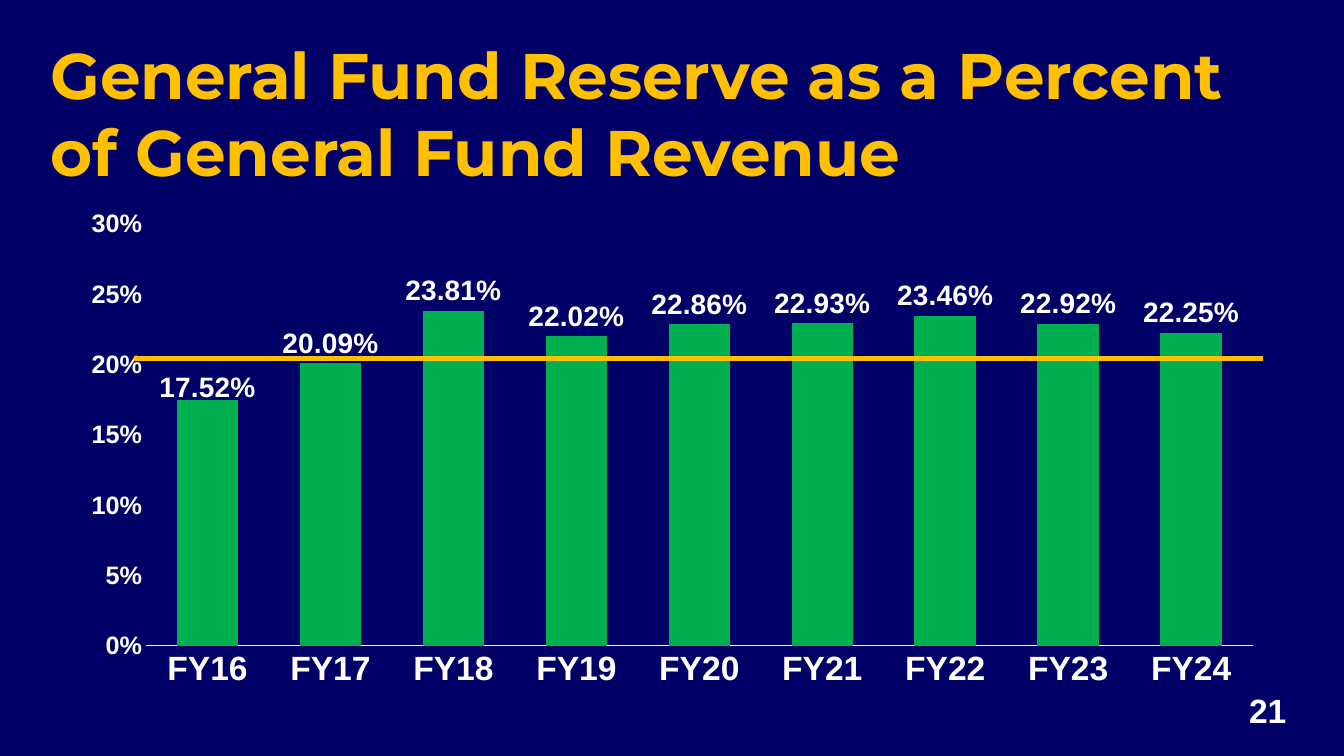
from lxml import etree
from pptx import Presentation
from pptx import util as u
from pptx.chart.data import CategoryChartData
from pptx.dml.color import RGBColor
from pptx.enum import chart as ch, shapes, text
from pptx.oxml import ns

COLORS = {"navy": "000066", "gold": "FFC000", "green": "00B050", "white": "FFFFFF"}
RESERVES = {
    "FY16": 0.1752, "FY17": 0.2009, "FY18": 0.2381,
    "FY19": 0.2202, "FY20": 0.2286, "FY21": 0.2293,
    "FY22": 0.2346, "FY23": 0.2292, "FY24": 0.2225,
}


def rgb(name):
    return RGBColor.from_string(COLORS[name])


def manual_layout(**values):
    layout = etree.Element(ns.qn("c:layout"))
    manual = etree.SubElement(layout, ns.qn("c:manualLayout"))
    for tag, value in values.items():
        etree.SubElement(manual, ns.qn(f"c:{tag}"), val=str(value))
    return layout


class Deck:
    """Holds the style and the current slide, and adds elements to it."""

    body_font, title_font = "Arial", "Montserrat"

    def __init__(self):
        self.prs = Presentation()
        self.prs.slide_width, self.prs.slide_height = u.Cm(33.87), u.Cm(19.05)
        self.s = self.prs.slides.add_slide(self.prs.slide_layouts[5])
        self.s.background.fill.solid()
        self.s.background.fill.fore_color.rgb = rgb("navy")

    def style(self, font, size, color="white", name=body_font):
        font.size, font.bold, font.name = u.Pt(size), True, name
        font.color.rgb = rgb(color)

    def add_words(self, sp, words, size, color, name, align):
        tf = sp.text_frame
        tf.word_wrap = True
        tf.auto_size = text.MSO_AUTO_SIZE.NONE
        tf.vertical_anchor = text.MSO_ANCHOR.TOP
        p = tf.paragraphs[0]
        p.alignment = align
        r = p.add_run()
        r.text = words
        self.style(r.font, size, color, name)

    def title(self, words, x, y, w, h):
        sp = self.s.shapes.title
        sp.left, sp.top, sp.width, sp.height = map(u.Cm, (x, y, w, h))
        self.add_words(sp, words, 46, "gold", self.title_font, text.PP_ALIGN.LEFT)

    def page_number(self, words, x, y, w, h):
        sp = self.s.shapes.add_textbox(*map(u.Cm, (x, y, w, h)))
        self.add_words(sp, words, 24, "white", self.body_font, text.PP_ALIGN.CENTER)

    def column_chart(self, values, x, y, w, h):
        data = CategoryChartData(number_format="0.00%")
        data.categories = list(values)
        data.add_series("Series 1", list(values.values()))
        chart = self.s.shapes.add_chart(
            ch.XL_CHART_TYPE.COLUMN_CLUSTERED, *map(u.Cm, (x, y, w, h)), data).chart
        chart.has_legend = chart.has_title = False
        self.style(chart.font, 10)
        self.axes(chart)
        self.columns(chart.plots[0])
        area = chart.plots[0]._element.getparent()
        for old in area.findall(ns.qn("c:layout")):
            area.remove(old)
        area.insert(0, manual_layout(layoutTarget="inner", xMode="edge", yMode="edge",
                                     x=0.065, y=0.049, w=0.915, h=0.846))

    def axes(self, chart):
        for axis, size in ((chart.category_axis, 24), (chart.value_axis, 18)):
            axis.has_major_gridlines = False
            axis.major_tick_mark = axis.minor_tick_mark = ch.XL_TICK_MARK.NONE
            self.style(axis.tick_labels.font, size)
        line = chart.category_axis.format.line
        line.width = u.Pt(0.75)
        line.color.rgb = rgb("white")
        axis = chart.value_axis
        axis.format.line.fill.background()
        axis.minimum_scale, axis.maximum_scale, axis.major_unit = 0, 0.3, 0.05
        axis.tick_labels.number_format = "0%"
        axis.tick_labels.number_format_is_linked = False

    def columns(self, plot):
        plot.gap_width, plot.overlap, plot.vary_by_categories = 100, -27, False
        series = plot.series[0]
        series.format.fill.solid()
        series.format.fill.fore_color.rgb = rgb("green")
        labels = series.data_labels
        labels.show_value = True
        labels.number_format, labels.number_format_is_linked = "0.00%", False
        labels.position = ch.XL_LABEL_POSITION.OUTSIDE_END
        self.style(labels.font, 20)
        first = series.points[0].data_label
        first.position = ch.XL_LABEL_POSITION.OUTSIDE_END
        self.style(first.font, 20)
        idx = labels._element.find(ns.qn("c:dLbl")).find(ns.qn("c:idx"))
        idx.addnext(manual_layout(x=0, y=0.017))

    def rule(self, x1, x2, y):
        sp = self.s.shapes.add_connector(
            shapes.MSO_CONNECTOR.STRAIGHT, *map(u.Cm, (x1, y, x2, y)))
        sp.line.width = u.Pt(3.5)
        sp.line.color.rgb = rgb("gold")
        etree.SubElement(sp._element.spPr, ns.qn("a:effectLst"))


def main():
    deck = Deck()
    deck.page_number("21", 30.68, 17.25, 2.54, 1.27)
    deck.column_chart(RESERVES, 1.7, 5.03, 30.48, 12.57)
    deck.title("General Fund Reserve as a Percent of General Fund Revenue",
               1.02, 0.76, 30.48, 3.18)
    deck.rule(3.38, 31.83, 9.04)
    deck.prs.save("out.pptx")


if __name__ == "__main__":
    main()
